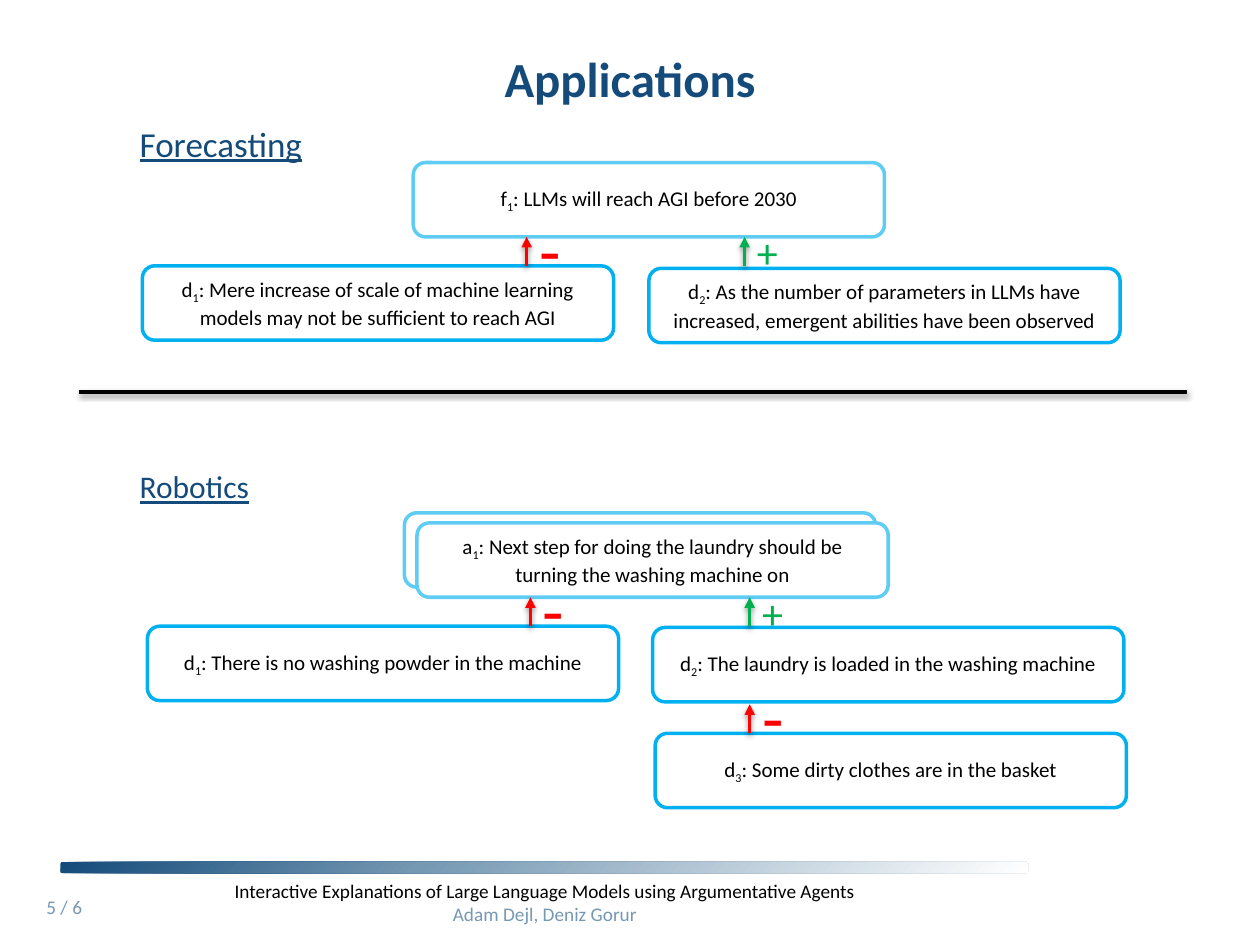
"""Builds the Applications slide with its two argument graphs."""
from lxml import etree
from pptx import Presentation
from pptx import util as u
from pptx.dml.color import RGBColor
from pptx.enum import shapes, text
from pptx.oxml import parse_xml
from pptx.oxml.ns import nsdecls, qn

THEME = {
    "font": "Calibri",
    "navy": "144B7A", "steel": "7598B3", "black": "000000", "white": "FFFFFF",
    "claim": "5ECCF3", "argument": "00B0F0", "attack": "FF0000", "support": "00B050",
    "title": 28, "forecasting": 20, "robotics": 18, "node": 12, "footer": 11,
    "minus": 40, "plus": 24, "line": 2,
}
NODE_SIZE = (3.74, 0.59)

LABELS = [
    ((0.5, 0.3, 9, 0.63), [("Applications", "navy")], "title",
     {"align": "CENTER", "anchor": "MIDDLE", "bold": True}),
    ((1.01, 0.92, 1.51, 0.44), [("Forecasting", "navy")], "forecasting", {"underline": True}),
    ((1.01, 3.66, 5, 0.4), [("Robotics", "navy")], "robotics", {"underline": True}),
    ((0.27, 7.06, 2.33, 0.4), [("5 / 6", "steel")], "footer", {}),
    ((1.16, 6.93, 6.33, 0.47),
     [("Interactive Explanations of Large Language Models using Argumentative Agents", "black"),
      ("Adam Dejl, Deniz Gorur", "steel")], "footer", {"align": "CENTER"}),
]
NODES = [
    (3.28, 1.29, "claim", ("f", "1", ": LLMs will reach AGI before 2030")),
    (5.15, 2.13, "argument", ("d", "2", ": As the number of parameters in LLMs have increased, "
                              "emergent abilities have been observed")),
    (1.13, 2.11, "argument", ("d", "1", ": Mere increase of scale of machine learning models "
                              "may not be sufficient to reach AGI")),
    (3.21, 4.07, "claim", ()),
    (3.31, 4.15, "claim", ("a", "1", ": Next step for doing the laundry should be "
                           "turning the washing machine on")),
    (5.18, 4.98, "argument", ("d", "2", ": The laundry is loaded in the washing machine")),
    (1.17, 4.97, "argument", ("d", "1", ": There is no washing powder in the machine")),
    (5.2, 5.82, "argument", ("d", "3", ": Some dirty clothes are in the basket")),
]
RELATIONS = [
    (4.18, 2.11, "attack"), (5.91, 2.11, "support"),
    (4.21, 4.97, "attack"), (5.95, 4.97, "support"), (5.95, 5.82, "attack"),
]
SIGNS = {"attack": ("-", "minus", 0.52, 0.77), "support": ("+", "plus", 0.36, 0.5)}
ARROW_LENGTH = 0.23


def inches(values):
    return [u.Inches(value) for value in values]


def color(name):
    return RGBColor.from_string(THEME[name])


def add_span(para, words, size, ink, bold=None, underline=None):
    span = para.add_run()
    span.text = words
    font = span.font
    font.name, font.size = THEME["font"], u.Pt(THEME[size])
    font.bold, font.underline = bold, underline
    font.color.rgb = color(ink)
    return span


def add_label(owner, place, lines, size, align="LEFT", anchor="TOP", wrap=True, **style):
    frame = owner.shapes.add_textbox(*inches(place)).text_frame
    frame.word_wrap = wrap
    frame.vertical_anchor = text.MSO_ANCHOR[anchor]
    if not wrap:
        frame.auto_size = text.MSO_AUTO_SIZE.SHAPE_TO_FIT_TEXT
    for index, (words, ink) in enumerate(lines):
        para = frame.add_paragraph() if index else frame.paragraphs[0]
        para.alignment = text.PP_ALIGN[align]
        add_span(para, words, size, ink, **style)


def add_node(page, left, top, kind, parts):
    box = page.shapes.add_shape(shapes.MSO_SHAPE.ROUNDED_RECTANGLE,
                                *inches((left, top, *NODE_SIZE)))
    box.shadow.inherit = False
    box.fill.solid()
    box.fill.fore_color.rgb = color("white")
    box.line.color.rgb = color(kind)
    box.line.width = u.Pt(THEME["line"])
    frame = box.text_frame
    frame.word_wrap = True
    frame.vertical_anchor = text.MSO_ANCHOR.MIDDLE
    para = frame.paragraphs[0]
    para.alignment = text.PP_ALIGN.CENTER
    for index, words in enumerate(parts):
        span = add_span(para, words, "node", "black")
        if index == 1:
            span.font._element.set("baseline", "-25000")


def add_line(owner, start, end, ink, arrow=False):
    line = owner.shapes.add_connector(shapes.MSO_CONNECTOR.STRAIGHT, *inches((*start, *end)))
    line.line.color.rgb = color(ink)
    line.line.width = u.Pt(THEME["line"])
    if arrow:
        etree.SubElement(line.line._get_or_add_ln(), qn("a:tailEnd"), type="triangle")
    line._element.spPr.append(parse_xml(
        f'<a:effectLst {nsdecls("a")}><a:outerShdw blurRad="40000" dist="20000" dir="5400000" '
        f'rotWithShape="0"><a:srgbClr val="{THEME["black"]}"><a:alpha val="38000"/></a:srgbClr>'
        '</a:outerShdw></a:effectLst>'))


def add_relation(page, left, bottom, kind):
    sign, size, rise, height = SIGNS[kind]
    group = page.shapes.add_group_shape()
    add_line(group, (left, bottom), (left, bottom - ARROW_LENGTH), kind, arrow=True)
    add_label(group, (left, bottom - rise, 0.37, height), [(sign, kind)], size, wrap=False)


def add_footer_bar(page):
    bar = page.shapes.add_shape(shapes.MSO_SHAPE.ROUNDED_RECTANGLE,
                                *inches((0.48, 6.84, 7.68, 0.09)))
    bar.shadow.inherit = False
    bar.line.fill.background()
    stops = "".join(f'<a:gs pos="{place * 1000}"><a:srgbClr val="{THEME[ink]}"/></a:gs>'
                    for place, ink in ((0, "white"), (63, "steel"), (100, "navy")))
    bar._element.spPr.find(qn("a:prstGeom")).addnext(parse_xml(
        f'<a:gradFill {nsdecls("a")} rotWithShape="1"><a:gsLst>{stops}</a:gsLst>'
        '<a:path path="circle"><a:fillToRect l="100000" t="100000"/></a:path></a:gradFill>'))


def main():
    deck = Presentation()
    deck.slide_width, deck.slide_height = inches((10, 7.5))
    page = deck.slides.add_slide(deck.slide_layouts[6])
    add_footer_bar(page)
    for place, lines, size, style in LABELS:
        add_label(page, place, lines, size, **style)
    for node in NODES:
        add_node(page, *node)
    for relation in RELATIONS:
        add_relation(page, *relation)
    add_line(page, (0.63, 3.11), (9.42, 3.11), "black")
    deck.save("out.pptx")


if __name__ == "__main__":
    main()
